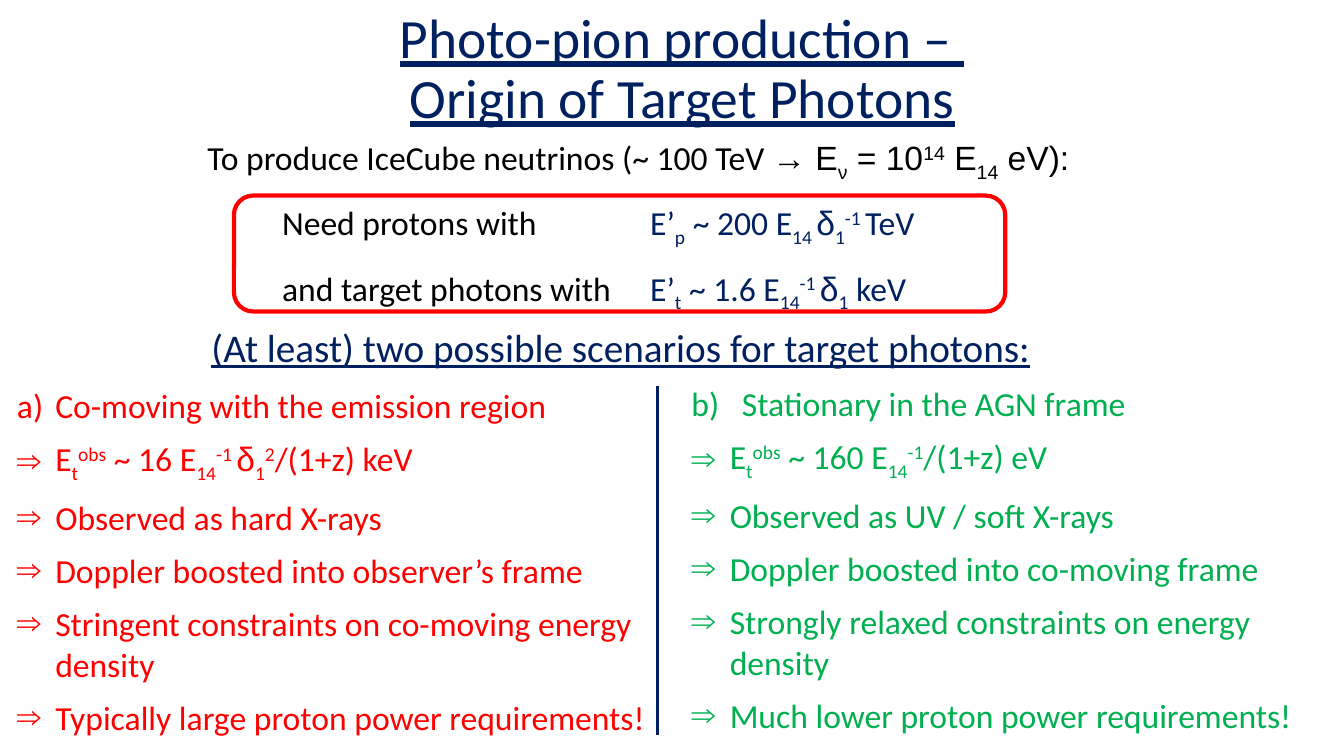
import pptx
import pptx.util
import pptx.dml.color
import pptx.enum.shapes
import pptx.enum.text
import pptx.oxml.ns
from lxml import etree

Inches = pptx.util.Inches
Pt = pptx.util.Pt
RGBColor = pptx.dml.color.RGBColor
Align = pptx.enum.text.PP_ALIGN
qn = pptx.oxml.ns.qn

NAVY = RGBColor(0x00, 0x20, 0x60)
BLACK = RGBColor(0x00, 0x00, 0x00)
RED = RGBColor(0xFF, 0x00, 0x00)
GREEN = RGBColor(0x00, 0xB0, 0x50)

BASELINES = {"_": "-25000", "^": "30000"}

CO_MOVING = [
    "Co-moving with the emission region",
    "E|_t|^obs| ~ 16 E|_14|^-1 |@δ|_1|^2|/(1+z) keV",
    "Observed as hard X-rays",
    "Doppler boosted into observer’s frame",
    "Stringent constraints on co-moving energy density",
    "Typically large proton power requirements!",
]
STATIONARY = [
    "Stationary in the AGN frame",
    "E|_t|^obs| ~ 160 E|_14|^-1|/(1+z) eV",
    "Observed as UV / soft X-rays",
    "Doppler boosted into co-moving frame",
    "Strongly relaxed constraints on energy density",
    "Much lower proton power requirements!",
]


def add_runs(p, markup, size, color, underline=None):
    """Split markup at | into runs; prefixes: @ Arial, * navy, _ sub, ^ super."""
    for part in markup.split("|"):
        if part == "\v":
            p.add_line_break()
            continue
        style = {"size": Pt(size), "name": "Calibri", "underline": underline}
        run_color, baseline = color, None
        while part[0] in "@*_^":
            mark, part = part[0], part[1:]
            if mark == "@":
                style["name"] = "Arial"
            elif mark == "*":
                run_color = NAVY
            else:
                baseline = BASELINES[mark]
        r = p.add_run()
        r.text = part
        for name, value in style.items():
            setattr(r.font, name, value)
        r.font.color.rgb = run_color
        if baseline:
            r._r.get_or_add_rPr().set("baseline", baseline)


def add_text(s, box, lines, size, color, gap=0, underline=None, align=Align.LEFT):
    tf = s.shapes.add_textbox(*map(Inches, box)).text_frame
    tf.word_wrap = True
    for i, line in enumerate(lines):
        p = tf.paragraphs[0] if i == 0 else tf.add_paragraph()
        p.alignment = align
        if i and gap:
            p.space_before = Pt(gap)
        add_runs(p, line, size, color, underline)
    return tf


def add_line_xml(p, tag, **attributes):
    return etree.SubElement(p._p.get_or_add_pPr(), qn(tag), attributes)


def set_bullet(p, indent, letter=None):
    """Hang the paragraph behind a letter (1 is a) or, without one, an arrow."""
    pPr = p._p.get_or_add_pPr()
    pPr.set("marL", str(Inches(indent)))
    pPr.set("indent", str(-Inches(indent)))
    if letter:
        add_line_xml(p, "a:buFont", typeface="Calibri")
        add_line_xml(p, "a:buAutoNum", type="alphaLcParenR", startAt=str(letter))
    else:
        add_line_xml(p, "a:buFont", typeface="Arial")
        add_line_xml(p, "a:buChar", char="⇒")


def add_title(s, box):
    tf = add_text(s, box, ["Photo-pion production – |\v|Origin of Target Photons"],
                  39.6, NAVY, underline=True, align=Align.CENTER)
    tf.vertical_anchor = pptx.enum.text.MSO_ANCHOR.MIDDLE
    tf.paragraphs[0].line_spacing = 0.9


def add_requirements(s, box):
    left, top, width, height = box
    tf = add_text(s, box, [
        "To produce IceCube neutrinos (~ 100 TeV |@→ E|@_ν|@ = 10|@^14|@ E|@_14|@ eV):",
        "\tNeed protons with\t|*E’|*_p|* ~ 200 E|*_14 |*@δ|*_1|*^-1 |*TeV",
        "\tand target photons with\t|*E’|*_t|* ~ 1.6 E|*_14|*^-1 |*@δ|*_1|* keV",
    ], 24, BLACK, gap=13.8)
    for p in tf.paragraphs[1:]:
        stops = add_line_xml(p, "a:tabLst")
        for pos in (0.74, 4.39):
            etree.SubElement(stops, qn("a:tab"), pos=str(Inches(pos)), algn="l")

    frame = s.shapes.add_shape(
        pptx.enum.shapes.MSO_SHAPE.ROUNDED_RECTANGLE,
        Inches(left + 0.36), Inches(top + 0.63), Inches(7.65), Inches(1.15))
    frame.shadow.inherit = False
    frame.fill.background()
    frame.line.color.rgb = RED
    frame.line.width = Pt(3)


def add_scenario(s, box, lines, color, letter, letter_indent):
    tf = add_text(s, box, lines, 24, color, gap=9.2)
    set_bullet(tf.paragraphs[0], letter_indent, letter)
    for p in tf.paragraphs[1:]:
        set_bullet(p, 0.38)


def add_divider(s, x, top, bottom):
    line = s.shapes.add_connector(
        pptx.enum.shapes.MSO_CONNECTOR.STRAIGHT,
        Inches(x), Inches(top), Inches(x), Inches(bottom))
    line.line.color.rgb = NAVY
    line.line.width = Pt(2)
    etree.SubElement(line._element.spPr, qn("a:effectLst"))


def main():
    prs = pptx.Presentation()
    prs.slide_width, prs.slide_height = Inches(13.33), Inches(7.5)
    s = prs.slides.add_slide(prs.slide_layouts[6])
    add_title(s, (2.32, 0.07, 8.89, 1.26))
    add_requirements(s, (1.96, 1.31, 9.9, 2.02))
    add_text(s, (1.58, 3.16, 9.15, 0.57),
             ["(At least) two possible scenarios for target photons:"],
             28, NAVY, underline=True, align=Align.CENTER)
    add_scenario(s, (0.07, 3.77, 6.51, 3.64), CO_MOVING, RED, 1, 0.38)
    add_scenario(s, (6.76, 3.75, 6.5, 3.6), STATIONARY, GREEN, 2, 0.5)
    add_divider(s, 6.52, 3.83, 7.29)
    prs.save("out.pptx")


if __name__ == "__main__":
    main()
